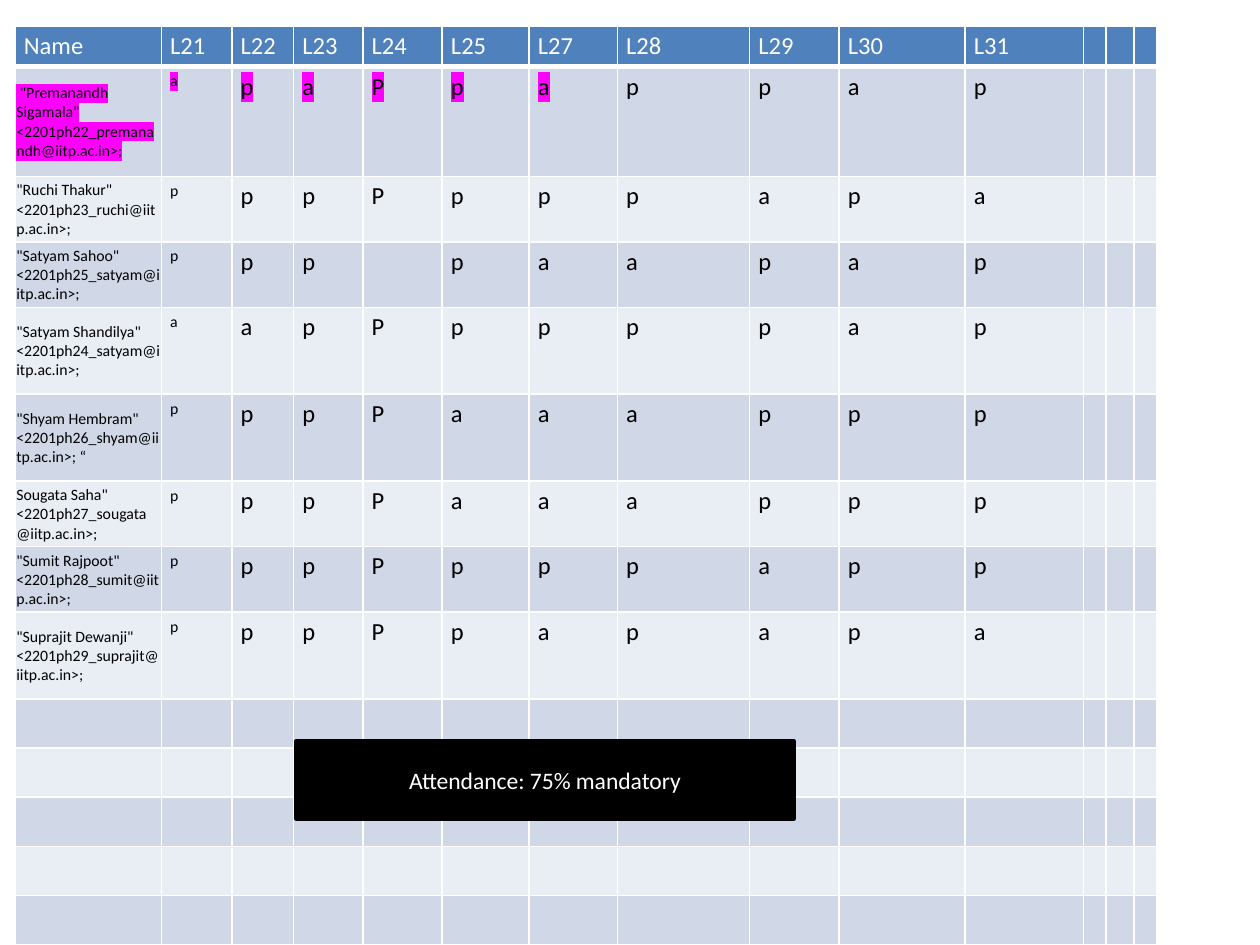
import pptx
import pptx.dml.color
import pptx.enum.shapes
import pptx.enum.text
import pptx.oxml.ns
import pptx.util
from lxml import etree


def rgb(value):
    return pptx.dml.color.RGBColor.from_string(value)


def add_color(parent, tag, value):
    """Append a drawing element that holds one plain colour."""
    qn = pptx.oxml.ns.qn
    node = etree.SubElement(parent, qn(tag))
    etree.SubElement(node, qn("a:srgbClr"), val=value)


class Deck:
    FONT = "Calibri"
    HEADER, BANDS = "4F81BD", ("E9EDF4", "D0D8E8")
    WHITE, BLACK, MARK = "FFFFFF", "000000", "FF00FF"
    HEAD_SIZE, NAME_SIZE, NOTE_SIZE = 14, 9, 13.5
    NAME_INSETS = (0.01, 0.01, 0.01, 0)
    CELL_INSETS = (0.07, 0.04, 0.07, 0.04)

    def __init__(self, width, height):
        self.prs = pptx.Presentation()
        self.prs.slide_width = pptx.util.Inches(width)
        self.prs.slide_height = pptx.util.Inches(height)
        self.s = self.prs.slides.add_slide(self.prs.slide_layouts[6])

    # Lengths are percentages of the slide's width and height
    def x(self, share):
        return round(self.prs.slide_width * share / 100)

    def y(self, share):
        return round(self.prs.slide_height * share / 100)

    def run(self, p, text, size, color, mark=None):
        r = p.add_run()
        r.text = text
        r.font.size = pptx.util.Pt(size)
        r.font.bold = False
        r.font.color.rgb = rgb(color)
        if mark:
            add_color(r.font._element, "a:highlight", mark)
        r.font.name = self.FONT

    def borders(self, cell, bottom):
        tcPr = cell._tc.get_or_add_tcPr()
        for side in "LRTB":
            width = bottom if side == "B" else 1
            ln = etree.SubElement(tcPr, pptx.oxml.ns.qn("a:ln" + side),
                                  w=str(pptx.util.Pt(width)))
            add_color(ln, "a:solidFill", self.WHITE)

    def cell(self, cell, text, row, col, marked):
        header, name = row == 0, col == 0 and row > 0
        self.borders(cell, 3 if header else 1)
        cell.fill.solid()
        cell.fill.fore_color.rgb = rgb(self.HEADER if header else self.BANDS[row % 2])
        insets = self.NAME_INSETS if name and text else self.CELL_INSETS
        (cell.margin_left, cell.margin_top,
         cell.margin_right, cell.margin_bottom) = map(pptx.util.Inches, insets)
        if name and text:
            cell.vertical_anchor = pptx.enum.text.MSO_ANCHOR.MIDDLE
        p = cell.text_frame.paragraphs[0]
        if text:
            small = row > 0 and col < 2
            self.run(p, text, self.NAME_SIZE if small else self.HEAD_SIZE,
                     self.WHITE if header else self.BLACK,
                     self.MARK if marked else None)
        else:
            p._p.get_or_add_endParaRPr().set("sz", str(self.HEAD_SIZE * 100))

    def table(self, left, top, cols, rows, data, marked):
        frame = self.s.shapes.add_table(len(rows), len(cols), self.x(left), self.y(top),
                                        self.x(sum(cols)), self.y(sum(rows)))
        table = frame.table
        for column, share in zip(table.columns, cols):
            column.width = self.x(share)
        for i, share in enumerate(rows):
            table.rows[i].height = self.y(share)
            values = data[i] if i < len(data) else []
            for j in range(len(cols)):
                text = values[j] if j < len(values) else ""
                self.cell(table.cell(i, j), text, i, j, (i, j) in marked)

    def box(self, left, top, width, height, text):
        sp = self.s.shapes.add_shape(pptx.enum.shapes.MSO_SHAPE.RECTANGLE, self.x(left),
                                     self.y(top), self.x(width), self.y(height))
        sp.shadow.inherit = False
        sp.fill.solid()
        sp.fill.fore_color.rgb = rgb(self.BLACK)
        sp.line.color.rgb = rgb(self.BLACK)
        sp.line.width = pptx.util.Pt(2)
        tf = sp.text_frame
        tf.word_wrap = True
        tf.vertical_anchor = pptx.enum.text.MSO_ANCHOR.MIDDLE
        p = tf.paragraphs[0]
        p.alignment = pptx.enum.text.PP_ALIGN.CENTER
        self.run(p, text, self.NOTE_SIZE, self.WHITE)


# Lectures, and one mark per lecture for each student ("-" is no entry)
LECTURES = "L21 L22 L23 L24 L25 L27 L28 L29 L30 L31".split()
STUDENTS = [
    (' "Premanandh Sigamala" <2201ph22_premanandh@iitp.ac.in>;', "apaPpappap"),
    ('"Ruchi Thakur" <2201ph23_ruchi@iitp.ac.in>;', "pppPpppapa"),
    ('"Satyam Sahoo" <2201ph25_satyam@iitp.ac.in>;', "ppp-paapap"),
    ('"Satyam Shandilya" <2201ph24_satyam@iitp.ac.in>;', "aapPppppap"),
    ('"Shyam Hembram" <2201ph26_shyam@iitp.ac.in>; “', "pppPaaappp"),
    ('Sougata Saha" <2201ph27_sougata@iitp.ac.in>;', "pppPaaappp"),
    ('"Sumit Rajpoot" <2201ph28_sumit@iitp.ac.in>;', "pppPpppapp"),
    ('"Suprajit Dewanji" <2201ph29_suprajit@iitp.ac.in>;', "pppPpapapa"),
]
COLUMNS = [11.6, 5.6, 4.9, 5.5, 6.3, 6.9, 7, 10.5, 7.1, 10, 9.4, 1.8, 2.2, 1.8]
SHORT, TALL = 6.93, 9.2
ROWS = [4.27, 11.6, SHORT, SHORT, TALL, TALL, SHORT, SHORT, TALL] + [5.2] * 5


def main():
    deck = Deck(10, 7.5)

    # Attendance table, with the first student's early entries highlighted
    data = [["Name"] + LECTURES]
    data += [[name] + list(marks.replace("-", " ").split(" ")[0]) if "-" not in marks
             else [name] + [m.strip("-") for m in marks] for name, marks in STUDENTS]
    deck.table(1.2, 2.8, COLUMNS, ROWS, data, {(1, col) for col in range(7)})

    # Attendance rule
    deck.box(23.5, 78.4, 39.5, 8.27, "Attendance: 75% mandatory")

    deck.prs.save("out.pptx")


if __name__ == "__main__":
    main()
